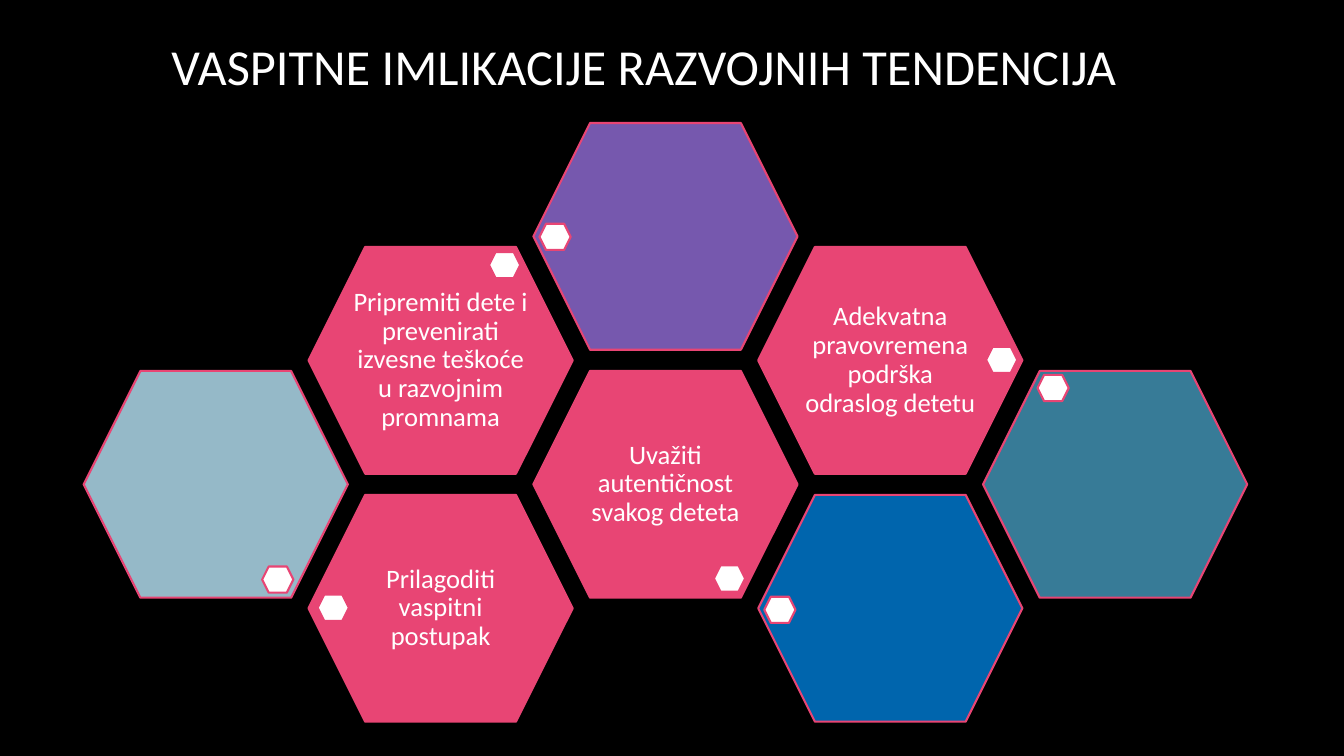
from pptx import Presentation
from pptx.dml.color import RGBColor as RGB
from pptx.enum.shapes import MSO_SHAPE as Shape
from pptx.enum.text import MSO_ANCHOR as Anchor, PP_ALIGN as Align
from pptx.oxml.ns import qn
from pptx.util import Inches, Pt
from lxml.etree import SubElement

BLACK = RGB(0x00, 0x00, 0x00)
WHITE = RGB(0xFF, 0xFF, 0xFF)
PINK = RGB(0xE8, 0x45, 0x74)
SKY = RGB(0xA6, 0xCE, 0xDE)
BLUE = RGB(0x00, 0x70, 0xC0)
PURPLE = RGB(0x83, 0x62, 0xC2)
TEAL = RGB(0x3E, 0x89, 0xA8)

HEAD = "VASPITNE IMLIKACIJE RAZVOJNIH TENDENCIJA"
CELLS = [
    (1, 3, PINK, (0.09, 0.99), "Prilagoditi vaspitni postupak"),
    (0, 2, SKY, (1.77, 1.94), ""),
    (2, 2, PINK, (1.79, 1.93), "Uvažiti autentičnost svakog deteta"),
    (3, 3, BLUE, (0.06, 1.01), ""),
    (1, 1, PINK, (1.79, 0.05),
     "Pripremiti dete i prevenirati izvesne teškoće u razvojnim promnama"),
    (2, 0, PURPLE, (0.06, 1.0), ""),
    (3, 1, PINK, (2.26, 0.99),
     "Adekvatna pravovremena podrška odraslog detetu"),
    (4, 2, TEAL, (0.54, 0.04), ""),
]


class Comb:
    """Honeycomb slide: columns and half-height rows of hexagons."""

    left, top = 0.83, 1.22
    col, row = 2.23, 1.23
    big, dot = (2.62, 2.25), (0.31, 0.26)
    pad = (0.41, 0.35)

    def __init__(self, deck):
        """Add a black title-only slide."""
        self.slide = deck.slides.add_slide(deck.slide_layouts[5])
        back = self.slide.background.fill
        back.solid()
        back.fore_color.rgb = BLACK

    def place(self, col, row, shift=(0, 0)):
        """Turn a grid cell and a shift into a point in inches."""
        return (self.left + col * self.col + shift[0],
                self.top + row * self.row + shift[1])

    def words(self, frame, text, size, align, inset):
        """Fill a text frame with one styled paragraph."""
        side, edge = map(Inches, inset)
        look = {"word_wrap": True, "vertical_anchor": Anchor.MIDDLE,
                "margin_left": side, "margin_right": side,
                "margin_top": edge, "margin_bottom": edge}
        for name, value in look.items():
            setattr(frame, name, value)
        frame.text = text
        para = frame.paragraphs[0]
        para.alignment, para.line_spacing = align, 0.9
        for name, value in {"name": "Calibri", "size": Pt(size)}.items():
            setattr(para.font, name, value)
        para.font.color.rgb = WHITE

    def title(self, text):
        """Move and format the title placeholder."""
        head = self.slide.shapes.title
        box = {"left": 1.6, "top": 0.16, "width": 10.53, "height": 1.06}
        for name, value in box.items():
            setattr(head, name, Inches(value))
        self.words(head.text_frame, text, 36, Align.LEFT, (0.1, 0.05))

    def hexa(self, point, size, tone, alpha=100):
        """Draw a hexagon with a pink outline."""
        form = self.slide.shapes.add_shape(
            Shape.HEXAGON, *map(Inches, point + size))
        form.shadow.inherit = False
        form.fill.solid()
        form.fill.fore_color.rgb = tone
        form.line.color.rgb = PINK
        form.line.width = Pt(1.5)
        if alpha < 100:
            paint = form._element.spPr.find(qn("a:solidFill"))[0]
            SubElement(paint, qn("a:alpha"), val=str(alpha * 1000))

    def label(self, col, row, text):
        """Set centred text inside a cell."""
        size = tuple(b - 2 * p for b, p in zip(self.big, self.pad))
        point = self.place(col, row, self.pad)
        box = self.slide.shapes.add_textbox(*map(Inches, point + size))
        self.words(box.text_frame, text, 19, Align.CENTER, (0, 0.03))

    def cell(self, col, row, tone, spot, text):
        """Draw a large hexagon, its text and its small marker."""
        self.hexa(self.place(col, row), self.big, tone, 100 if text else 90)
        if text:
            self.label(col, row, text)
        self.hexa(self.place(col, row, spot), self.dot, WHITE)


def main():
    """Build and save the slide."""
    deck = Presentation()
    deck.slide_width, deck.slide_height = Inches(13.33), Inches(7.5)
    comb = Comb(deck)
    comb.title(HEAD)
    for cell in CELLS:
        comb.cell(*cell)
    deck.save("out.pptx")


if __name__ == "__main__":
    main()
